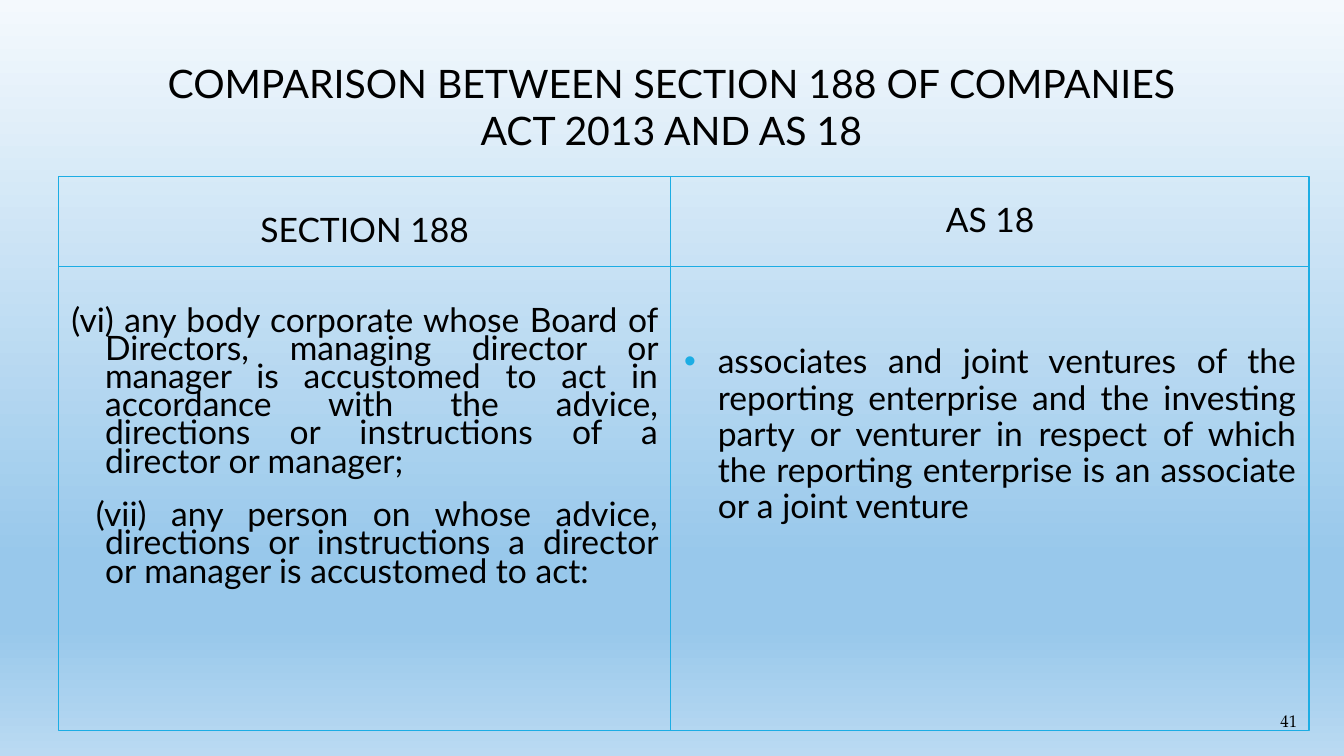
from copy import deepcopy

from lxml import etree
from pptx import Presentation
from pptx.dml.color import RGBColor
from pptx.enum.shapes import MSO_SHAPE
from pptx.enum.text import MSO_ANCHOR, PP_ALIGN
from pptx.oxml.ns import qn
from pptx.util import Cm, Pt

RECTANGLE = MSO_SHAPE.RECTANGLE
TOP, MIDDLE, BOTTOM = MSO_ANCHOR.TOP, MSO_ANCHOR.MIDDLE, MSO_ANCHOR.BOTTOM
CENTER, RIGHT, JUSTIFY = PP_ALIGN.CENTER, PP_ALIGN.RIGHT, PP_ALIGN.JUSTIFY

TITLE = "COMPARISON BETWEEN SECTION 188 OF COMPANIES ACT 2013 AND AS 18"
PAGE_NUMBER = "41"
COLUMNS = [
    {
        "heading": "SECTION 188",
        "items": [
            "(vi) any body corporate whose Board of Directors, managing director or "
            "manager is accustomed to act in accordance with the advice, directions "
            "or instructions of a director or manager;",
            " (vii) any person on whose advice, directions or instructions a director "
            "or manager is accustomed to act:",
        ],
        "width": 15.44, "spacing": 0.7, "bullet": None,
        "heading_inset": 0.84, "items_inset": 1.09,
    },
    {
        "heading": "AS 18",
        "items": [
            "associates and joint ventures of the reporting enterprise and the "
            "investing party or venturer in respect of which the reporting "
            "enterprise is an associate or a joint venture",
        ],
        "width": 16.08, "spacing": 0.9, "bullet": "•",
        "heading_inset": 0.18, "items_inset": 1.98,
    },
]
THEME = {
    "text": RGBColor.from_string("000000"),
    "accent": RGBColor.from_string("1CADE4"),
    "background": [(0, "F4F9FD"), (74, "98C8EB"), (83, "98C8EB"), (100, "BADAF2")],
    "font": "Lato", "number_font": "TeX Gyre Pagella",
    "title_size": 28, "body_size": 24, "number_size": 12,
    "line_width": 0.75, "paragraph_gap": 18,
}
SLIDE_WIDTH, SLIDE_HEIGHT = 33.87, 19.05
GRID_LEFT, GRID_TOP = 1.47, 4.45
HEADING_HEIGHT, ITEMS_HEIGHT = 2.26, 11.71
INSET_SIDE, INSET_END = 0.33, 0.18
HANGING = 0.85


def paint_background(slide):
    fill = slide.background.fill
    fill.gradient()
    fill.gradient_angle = 270
    stop_list = slide.element.find(".//" + qn("a:gsLst"))
    template = deepcopy(stop_list[0])
    for stop in list(stop_list):
        stop_list.remove(stop)
    for _ in THEME["background"]:
        stop_list.append(deepcopy(template))
    for stop, (position, color) in zip(fill.gradient_stops, THEME["background"]):
        stop.position = position / 100
        stop.color.rgb = RGBColor.from_string(color)


def add_bullet(paragraph, character):
    properties = paragraph._p.get_or_add_pPr()
    color = etree.SubElement(properties, qn("a:buClr"))
    etree.SubElement(color, qn("a:srgbClr"), val=str(THEME["accent"]))
    etree.SubElement(properties, qn("a:buFont"), typeface="Arial")
    etree.SubElement(properties, qn("a:buChar"), char=character)


def write(shape, texts, size, align, anchor, font=THEME["font"], spacing=1.0,
          inset_top=INSET_END, hanging=0, bullet=None):
    frame = shape.text_frame
    frame.word_wrap = True
    frame.vertical_anchor = anchor
    frame.margin_left = frame.margin_right = Cm(INSET_SIDE)
    frame.margin_top, frame.margin_bottom = Cm(inset_top), Cm(INSET_END)
    for index, text in enumerate(texts):
        paragraph = frame.add_paragraph() if index else frame.paragraphs[0]
        paragraph.alignment = align
        paragraph.line_spacing = spacing
        if index:
            paragraph.space_before = Pt(THEME["paragraph_gap"])
        if hanging:
            properties = paragraph._p.get_or_add_pPr()
            properties.set("marL", str(Cm(hanging)))
            properties.set("indent", str(-Cm(hanging)))
        if bullet:
            add_bullet(paragraph, bullet)
        run = paragraph.add_run()
        run.text = text
        run.font.name = font
        run.font.size = Pt(size)
        run.font.color.rgb = THEME["text"]


def add_cell(slide, left, top, width, height):
    cell = slide.shapes.add_shape(RECTANGLE, Cm(left), Cm(top), Cm(width), Cm(height))
    cell.shadow.inherit = False
    cell.fill.background()
    cell.line.color.rgb = THEME["accent"]
    cell.line.width = Pt(THEME["line_width"])
    return cell


def add_comparison(slide):
    left = GRID_LEFT
    for column in COLUMNS:
        width, spacing = column["width"], column["spacing"]
        heading = add_cell(slide, left, GRID_TOP, width, HEADING_HEIGHT)
        write(heading, [column["heading"]], THEME["body_size"], CENTER, MIDDLE,
              spacing=spacing, inset_top=column["heading_inset"])
        items = add_cell(slide, left, GRID_TOP + HEADING_HEIGHT, width, ITEMS_HEIGHT)
        write(items, column["items"], THEME["body_size"], JUSTIFY, TOP,
              spacing=spacing, inset_top=column["items_inset"],
              hanging=HANGING, bullet=column["bullet"])
        left += width


def main():
    presentation = Presentation()
    presentation.slide_width, presentation.slide_height = Cm(SLIDE_WIDTH), Cm(SLIDE_HEIGHT)
    slide = presentation.slides.add_slide(presentation.slide_layouts[6])
    paint_background(slide)
    title = slide.shapes.add_textbox(Cm(3.38), Cm(0.43), Cm(27.08), Cm(3.61))
    write(title, [TITLE], THEME["title_size"], CENTER, BOTTOM)
    add_comparison(slide)
    number = slide.shapes.add_textbox(Cm(30.76), Cm(17.91), Cm(2.26), Cm(0.51))
    write(number, [PAGE_NUMBER], THEME["number_size"], RIGHT, MIDDLE,
          font=THEME["number_font"])
    presentation.save("out.pptx")


if __name__ == "__main__":
    main()
